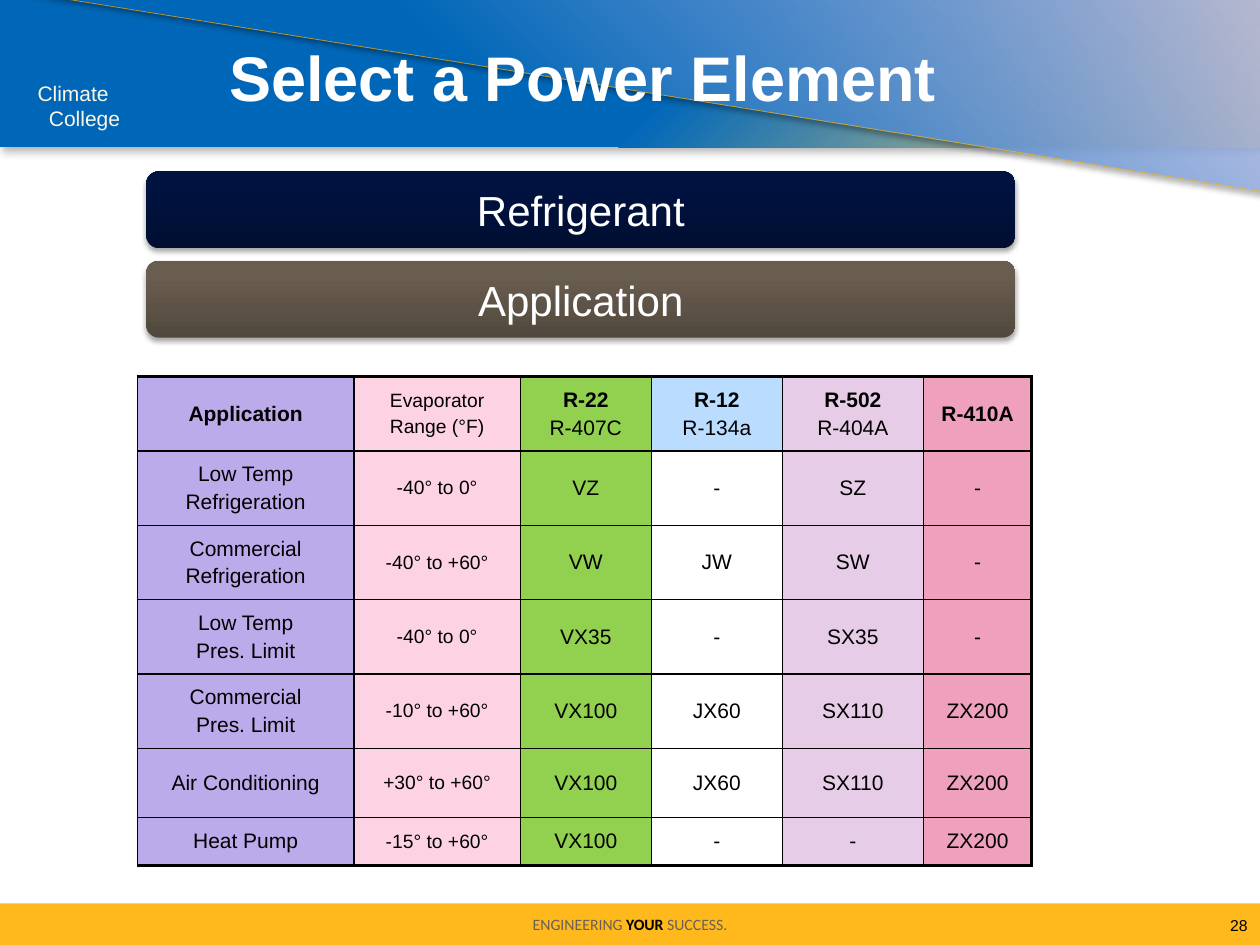
from dataclasses import dataclass
from typing import NamedTuple

from lxml import etree
from pptx import Presentation
from pptx import util as u
from pptx.dml.color import RGBColor
from pptx.enum import shapes, text
from pptx.oxml import parse_xml
from pptx.oxml.ns import nsdecls, qn

ALIGN = text.PP_ALIGN
KIND = shapes.MSO_SHAPE


@dataclass(frozen=True)
class Theme:
    font: str = "Arial"
    foot: str = "Calibri"
    white: str = "FFFFFF"
    black: str = "000000"
    cream: str = "FFF7E6"
    blue: str = "0067B8"
    sand: str = "FFD577"
    mist: str = "C3C8F8"
    gold: str = "FFB91D"
    edge: str = "FFB717"
    brown: str = "6A6055"
    title: float = 36
    bar: float = 24
    body: float = 12
    range: float = 11
    small: float = 9
    thin: float = 1
    thick: float = 2.25


class Box(NamedTuple):
    left: float
    top: float
    width: float
    height: float

    def emu(self) -> list:
        return [u.Inches(v) for v in self]


class Stop(NamedTuple):
    at: int
    color: str
    alpha: int = 100


class Shade(NamedTuple):
    color: str
    alpha: int
    blur: float
    dist: float
    angle: int


class Run(NamedTuple):
    words: str
    color: str
    bold: bool = False


class Bar(NamedTuple):
    label: str
    stops: list


class Col(NamedTuple):
    width: float
    fill: str | None
    head: str
    bold: int  # count of bold lines in the heading
    size: float = 12


T = Theme()
SOFT = Shade(T.black, 35, 3.1, 1.8, 90)
BARS = [
    Bar("Refrigerant", [Stop(0, "000E31"), Stop(80, "001240"), Stop(100, "001240")]),
    Bar("Application", [Stop(0, "51483D"), Stop(80, "695D4F"), Stop(100, "6A5E4F")]),
]
COLS = [
    Col(1.72, "BCABEB", "Application", 1),
    Col(1.32, "FDD3E4", "Evaporator\nRange (°F)", 0, T.range),
    Col(1.04, "92D050", "R-22\nR-407C", 1),
    Col(1.04, None, "R-12\nR-134a", 1),
    Col(1.12, "E6CCE6", "R-502\nR-404A", 1),
    Col(0.86, "EFA0BD", "R-410A", 1),
]
SKY = "B9DCFF"  # heading fill of the column that is otherwise clear
ROWS = [
    ["Low Temp\nRefrigeration", "-40° to 0°", "VZ", "-", "SZ", "-"],
    ["Commercial\nRefrigeration", "-40° to +60°", "VW", "JW", "SW", "-"],
    ["Low Temp\nPres. Limit", "-40° to 0°", "VX35", "-", "SX35", "-"],
    ["Commercial\nPres. Limit", "-10° to +60°", "VX100", "JX60", "SX110", "ZX200"],
    ["Air Conditioning", "+30° to +60°", "VX100", "JX60", "SX110", "ZX200"],
    ["Heat Pump", "-15° to +60°", "VX100", "-", "-", "ZX200"],
]
HEIGHTS = [0.59] * 5 + [0.55, 0.38]


def write(frame, lines: list[list[Run]], *, size: float, font: str = T.font,
          align=ALIGN.LEFT, gap: float = 0, wrap: bool = True, step: float = 0) -> None:
    """Fill a frame; gap is points between lines, step the indent of each next line."""
    frame.word_wrap = wrap
    frame.vertical_anchor = text.MSO_ANCHOR.MIDDLE
    for i, runs in enumerate(lines):
        para = frame.paragraphs[0] if i == 0 else frame.add_paragraph()
        para.alignment = align
        if i and gap:
            para.space_before = u.Pt(gap)
        if i and step:
            para._p.get_or_add_pPr().set("marL", str(u.Inches(step * i)))
        for item in runs:
            run = para.add_run()
            run.text = item.words
            run.font.name, run.font.size = font, u.Pt(size)
            run.font.bold = item.bold
            run.font.color.rgb = RGBColor.from_string(item.color)


def label(slide, box: Box, lines: list[list[Run]], **style) -> None:
    write(slide.shapes.add_textbox(*box.emu()).text_frame, lines, **style)


def shape(slide, kind, box: Box):
    item = slide.shapes.add_shape(kind, *box.emu())
    item.shadow.inherit = False
    item.line.fill.background()
    return item


def blend(item, stops: list[Stop], angle: int) -> None:
    """Give a shape a linear gradient."""
    marks = "".join(
        f'<a:gs pos="{s.at * 1000}"><a:srgbClr val="{s.color}">'
        f'<a:alpha val="{s.alpha * 1000}"/></a:srgbClr></a:gs>' for s in stops)
    item.fill.background()
    props = item._element.spPr
    props.replace(props.find(qn("a:noFill")), parse_xml(
        f'<a:gradFill {nsdecls("a")} rotWithShape="1"><a:gsLst>{marks}</a:gsLst>'
        f'<a:lin ang="{angle * 60000}" scaled="0"/></a:gradFill>'))


def cast(item, shade: Shade) -> None:
    """Give a shape an outer shadow."""
    item._element.spPr.find(qn("a:effectLst")).append(parse_xml(
        f'<a:outerShdw {nsdecls("a")} blurRad="{u.Pt(shade.blur)}" dist="{u.Pt(shade.dist)}" '
        f'dir="{shade.angle * 60000}" rotWithShape="0"><a:srgbClr val="{shade.color}">'
        f'<a:alpha val="{shade.alpha * 1000}"/></a:srgbClr></a:outerShdw>'))


def banner(slide) -> None:
    band = shape(slide, KIND.RECTANGLE, Box(-0.02, 0, 10.05, 1.17))
    blend(band, [Stop(54, T.blue), Stop(100, T.sand)], 45)
    cast(band, Shade("999999", 75, 5, 3, 45))

    wedge = shape(slide, KIND.ISOSCELES_TRIANGLE, Box(4.23, -4.34, 1.63, 10.12))
    wedge.adjustments[0] = 1
    wedge.rotation = 270
    blend(wedge, [Stop(40, T.blue), Stop(98, T.mist, 72)], 45)
    wedge.line.color.rgb = RGBColor.from_string(T.edge)
    wedge.line.width = u.Pt(0.5)
    tint = wedge.line._ln.find(".//" + qn("a:srgbClr"))
    etree.SubElement(tint, qn("a:alpha")).set("val", "68000")
    cast(wedge, SOFT)


def footer(slide) -> None:
    strip = shape(slide, KIND.RECTANGLE, Box(0, 7.17, 10, 0.33))
    strip.fill.solid()
    strip.fill.fore_color.rgb = RGBColor.from_string(T.gold)
    motto = [Run("ENGINEERING ", T.brown), Run("YOUR ", T.black, True), Run("SUCCESS.", T.brown)]
    write(strip.text_frame, [motto], size=T.small, font=T.foot, align=ALIGN.CENTER, wrap=False)


def border(cell, widths: dict[str, float]) -> None:
    props = cell._tc.get_or_add_tcPr()
    for side, width in widths.items():
        props.append(parse_xml(
            f'<a:ln{side} {nsdecls("a")} w="{u.Pt(width)}"><a:solidFill>'
            f'<a:srgbClr val="{T.black}"/></a:solidFill></a:ln{side}>'))


def grid(slide) -> None:
    rows = [[col.head for col in COLS]] + ROWS
    box = Box(1.09, 2.99, sum(c.width for c in COLS), sum(HEIGHTS))
    table = slide.shapes.add_table(len(rows), len(COLS), *box.emu()).table
    table.first_row = table.horz_banding = False
    for x, col in enumerate(COLS):
        table.columns[x].width = u.Inches(col.width)
    for y, row in enumerate(rows):
        table.rows[y].height = u.Inches(HEIGHTS[y])
        for x, (col, words) in enumerate(zip(COLS, row)):
            cell = table.cell(y, x)
            bold = col.bold if y == 0 else 0
            lines = [[Run(w, T.black, i < bold)] for i, w in enumerate(words.split("\n"))]
            write(cell.text_frame, lines, size=col.size, align=ALIGN.CENTER, gap=col.size * 0.2)
            cell.vertical_anchor = text.MSO_ANCHOR.MIDDLE
            heavy = {"L": False, "R": x == len(COLS) - 1, "T": y == 0, "B": y == len(rows) - 1}
            border(cell, {s: T.thick if on else T.thin for s, on in heavy.items()})
            fill = col.fill or (SKY if y == 0 else None)
            if fill:
                cell.fill.solid()
                cell.fill.fore_color.rgb = RGBColor.from_string(fill)
            else:
                cell.fill.background()


def main() -> None:
    deck = Presentation()
    deck.slide_width, deck.slide_height = u.Inches(10), u.Inches(7.5)
    slide = deck.slides.add_slide(deck.slide_layouts[6])
    banner(slide)
    footer(slide)
    label(slide, Box(0.2, 0.59, 0.9, 0.5), [[Run("Climate", T.cream)], [Run("College", T.cream)]],
          size=T.body, step=0.09)
    label(slide, Box(1.72, 0.08, 7.69, 1.06), [[Run("Select a Power Element", T.white, True)]],
          size=T.title)
    label(slide, Box(8.76, 7.18, 1.24, 0.32), [[Run("28", T.black)]],
          size=T.small, align=ALIGN.RIGHT)
    grid(slide)
    for i, bar in enumerate(BARS):
        item = shape(slide, KIND.ROUNDED_RECTANGLE, Box(1.16, 1.36 + 0.71 * i, 6.9, 0.61))
        blend(item, bar.stops, 270)
        cast(item, SOFT)
        write(item.text_frame, [[Run(bar.label, T.white)]], size=T.bar, align=ALIGN.CENTER)
    deck.save("out.pptx")


if __name__ == "__main__":
    main()
